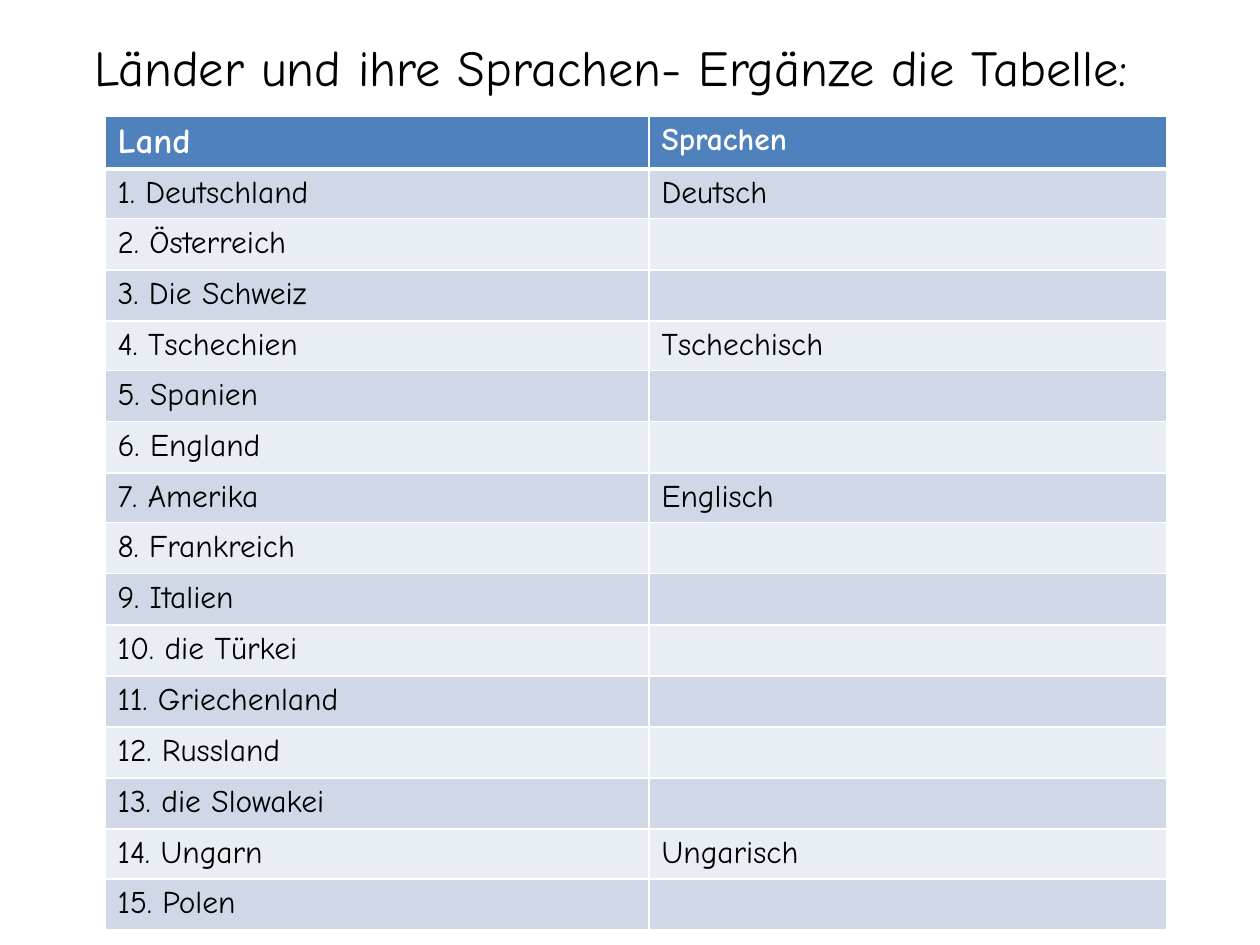
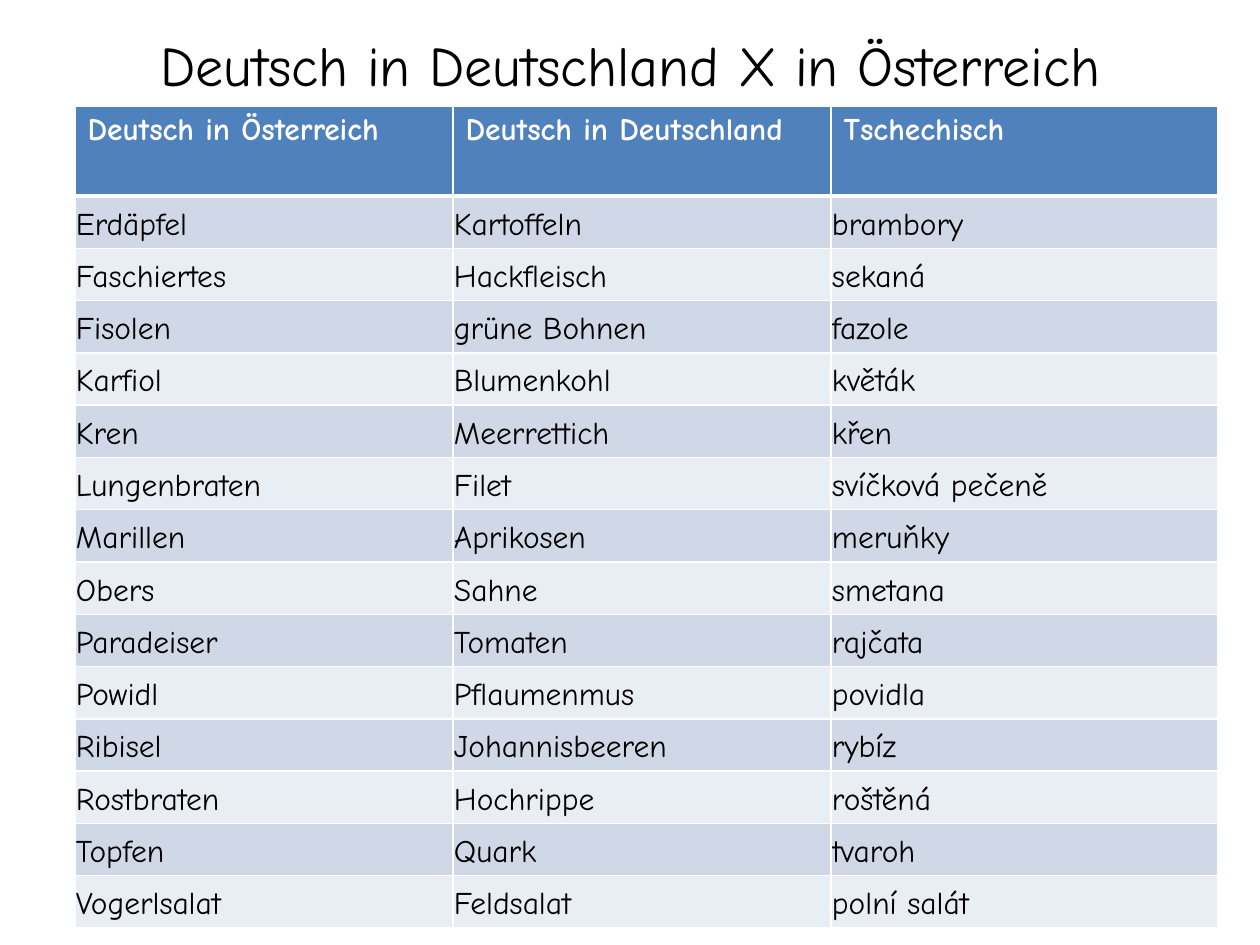
from lxml import etree
from pptx import Presentation
from pptx import util as u
from pptx.dml.color import RGBColor
from pptx.enum import text
from pptx.oxml.ns import qn

PX = 914400 / 126
FONT = "Comic Neue"
TITLE_ONLY = 5
COLORS = {
    "text": "000000",
    "header": "4F81BD",
    "header_text": "FFFFFF",
    "border": "FFFFFF",
    "odd_row": "D0D8E8",
    "even_row": "E9EDF4",
}

LANGUAGES = {
    "Deutschland": "Deutsch", "Österreich": "", "Die Schweiz": "",
    "Tschechien": "Tschechisch", "Spanien": "", "England": "",
    "Amerika": "Englisch", "Frankreich": "", "Italien": "",
    "die Türkei": "", "Griechenland": "", "Russland": "",
    "die Slowakei": "", "Ungarn": "Ungarisch", "Polen": "",
}

FOODS = [
    ("Erdäpfel", "Kartoffeln", "brambory"),
    ("Faschiertes", "Hackfleisch", "sekaná"),
    ("Fisolen", "grüne Bohnen", "fazole"),
    ("Karfiol", "Blumenkohl", "květák"),
    ("Kren", "Meerrettich", "křen"),
    ("Lungenbraten", "Filet", "svíčková pečeně"),
    ("Marillen", "Aprikosen", "meruňky"),
    ("Obers", "Sahne", "smetana"),
    ("Paradeiser", "Tomaten", "rajčata"),
    ("Powidl", "Pflaumenmus", "povidla"),
    ("Ribisel", "Johannisbeeren", "rybíz"),
    ("Rostbraten", "Hochrippe", "roštěná"),
    ("Topfen", "Quark", "tvaroh"),
    ("Vogerlsalat", "Feldsalat", "polní salát"),
]


def px(n):
    return u.Emu(round(n * PX))


def set_all(obj, values):
    for name, value in values.items():
        setattr(obj, name, value)


def write(p, words, size, color, bold=False):
    r = p.add_run()
    r.text = words
    set_all(r.font, {"name": FONT, "size": u.Pt(size), "bold": bold})
    r.font.color.rgb = RGBColor.from_string(COLORS[color])


def add_titled_slide(prs, title, size, box):
    s = prs.slides.add_slide(prs.slide_layouts[TITLE_ONLY])
    sp = s.shapes.title
    set_all(sp, dict(zip(("left", "top", "width", "height"), map(px, box))))
    tf = sp.text_frame
    set_all(tf, {"word_wrap": True, "auto_size": text.MSO_AUTO_SIZE.NONE,
                 "vertical_anchor": text.MSO_ANCHOR.MIDDLE})
    p = tf.paragraphs[0]
    p.alignment = text.PP_ALIGN.CENTER
    write(p, title, size, "text")
    return s


def set_borders(cell, widths):
    """Draw the cell's sides; widths maps L, R, T, B to points."""
    tc_pr = cell._tc.get_or_add_tcPr()
    for side, width in widths.items():
        ln = etree.SubElement(tc_pr, qn(f"a:ln{side}"), w=str(u.Pt(width)))
        fill = etree.SubElement(ln, qn("a:solidFill"))
        etree.SubElement(fill, qn("a:srgbClr"), val=COLORS["border"])


def fill_cell(cell, words, row, size, cell_format, line_spacing):
    header = row == 0
    set_borders(cell, {"L": 1, "R": 1, "T": 3 if row == 1 else 1,
                       "B": 3 if header else 1})
    band = "header" if header else "odd_row" if row % 2 else "even_row"
    cell.fill.solid()
    cell.fill.fore_color.rgb = RGBColor.from_string(COLORS[band])
    p = cell.text_frame.paragraphs[0]
    if not header:
        set_all(cell, cell_format)
        p.line_spacing = line_spacing
    if words:
        write(p, words, size, "header_text" if header else "text", header)


def add_word_table(s, left, top, height, widths, header_height, rows,
                   first_size=18, cell_format=None, line_spacing=None):
    frame = s.shapes.add_table(len(rows), len(widths), px(left), px(top),
                               px(sum(widths)), px(height))
    table = frame.table
    table.horz_banding = False
    for column, width in zip(table.columns, widths):
        column.width = px(width)
    body_height = (height - header_height) / (len(rows) - 1)
    for i, words in enumerate(rows):
        table.rows[i].height = px(body_height if i else header_height)
        for j, word in enumerate(words):
            size = first_size if i == j == 0 else 18
            fill_cell(table.cell(i, j), word, i, size, cell_format or {},
                      line_spacing)


def main():
    prs = Presentation()
    prs.slide_width, prs.slide_height = px(1260), px(945)

    # Countries and their languages
    s = add_titled_slide(prs, "Länder und ihre Sprachen- Ergänze die Tabelle:",
                         28.8, (25, 16, 1172, 100))
    countries = [(f"{n}. {land}", language)
                 for n, (land, language) in enumerate(LANGUAGES.items(), 1)]
    add_word_table(s, 105, 116, 799, (544, 518), 52,
                   [("Land", "Sprachen")] + countries, first_size=20)

    # Food words in Austria, Germany and Czech
    s = add_titled_slide(prs, "Deutsch in Deutschland X in Österreich",
                         32, (64, 16, 1134, 97))
    inset = px(1)
    tight = {"margin_left": inset, "margin_right": inset, "margin_top": inset,
             "margin_bottom": inset, "vertical_anchor": text.MSO_ANCHOR.MIDDLE}
    heads = ("Deutsch in Österreich", "Deutsch in Deutschland", "Tschechisch")
    add_word_table(s, 75, 106, 822, (378, 378, 387), 90, [heads] + FOODS,
                   cell_format=tight, line_spacing=1.15)

    prs.save("out.pptx")


if __name__ == "__main__":
    main()
